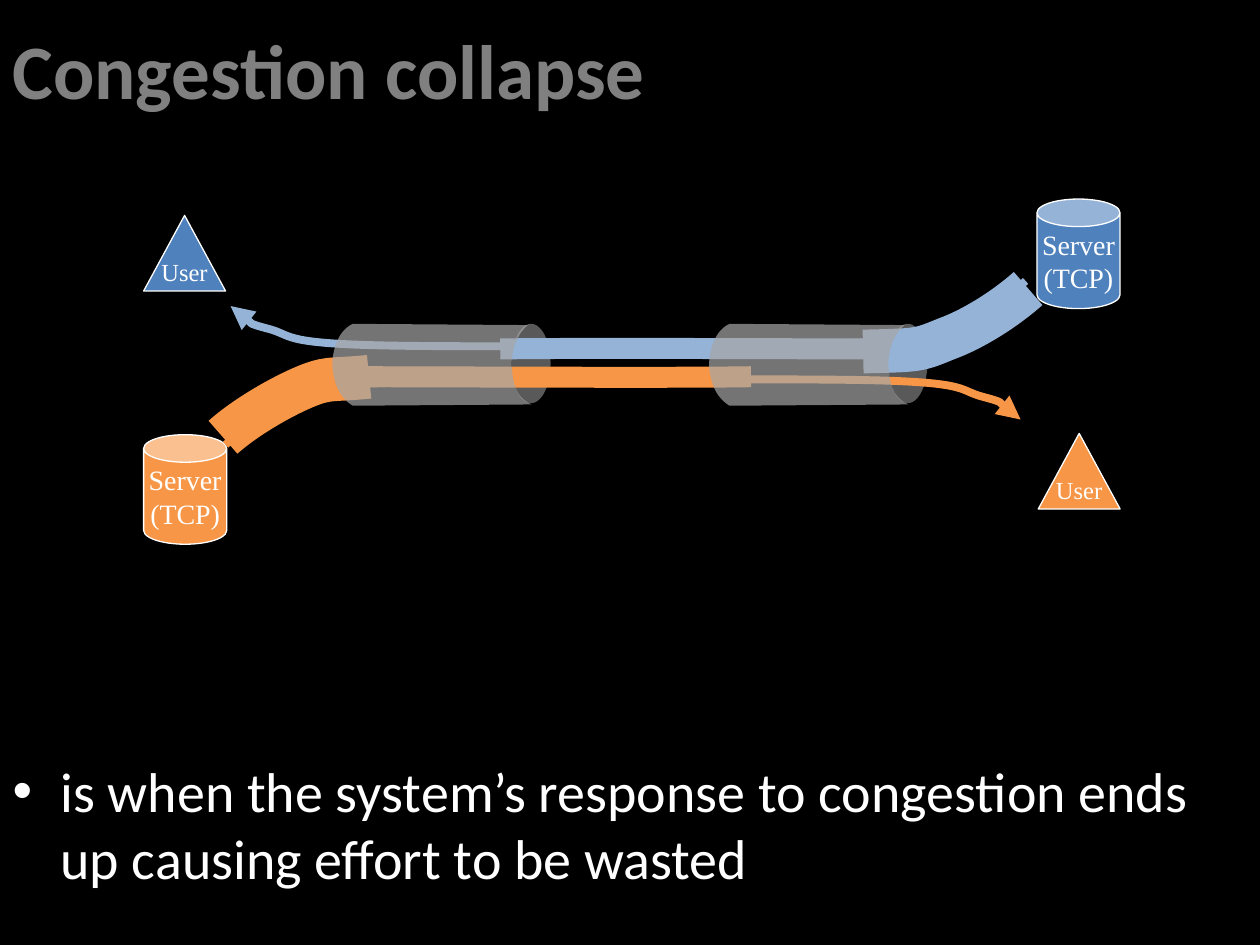
from dataclasses import dataclass

from lxml import etree
from pptx import Presentation
from pptx import util as u
from pptx.dml import color
from pptx.enum import shapes, text
from pptx.oxml import ns

KIND = shapes.MSO_SHAPE


@dataclass
class Theme:
    back: str = "000000"
    head: str = "808080"
    ink: str = "FFFFFF"
    blue: str = "4F81BD"
    sky: str = "95B3D7"
    amber: str = "F79646"
    pipe: str = "A6A6A6"
    mouth: str = "595959"
    sans: str = "Calibri"
    serif: str = "Times New Roman"
    title: int = 44
    body: int = 32
    host: int = 16
    user: int = 14
    thin: float = 4.5
    mid: int = 12
    wide: int = 25


def rgb(code):
    return color.RGBColor.from_string(code)


def turn(parts):
    return [[(9.93 - x, 5.76 - y) for x, y in part] for part in parts]


def shift(parts, gap):
    return [[(x + gap, y) for x, y in part] for part in parts]


class Deck:
    def __init__(self, theme):
        self.theme = theme
        self.file = Presentation()
        self.file.slide_width = u.Inches(10)
        self.file.slide_height = u.Inches(7.5)
        self.slide = self.file.slides.add_slide(self.file.slide_layouts[1])
        fill = self.slide.background.fill
        fill.solid()
        fill.fore_color.rgb = rgb(theme.back)

    def style(self, para, size, face, ink, bold=False):
        font = para.font
        font.size, font.name, font.bold = u.Pt(size), face, bold
        font.color.rgb = rgb(ink)

    def holder(self, index, words, box, size, ink, bold=False):
        shape = self.slide.placeholders[index]
        shape.left, shape.top, shape.width, shape.height = map(u.Inches, box)
        frame = shape.text_frame
        frame.text = words
        frame.auto_size = text.MSO_AUTO_SIZE.NONE
        para = frame.paragraphs[0]
        para.alignment = text.PP_ALIGN.LEFT
        self.style(para, size, self.theme.sans, ink, bold)
        return para

    def title(self, words):
        self.holder(0, words, (0, 0, 10, 1.09), self.theme.title, self.theme.head, True)

    def body(self, words):
        para = self.holder(1, words, (0, 5.95, 10, 1.55), self.theme.body, self.theme.ink)
        props = para._p.get_or_add_pPr()
        props.set("marL", str(u.Inches(0.38)))
        props.set("indent", str(-u.Inches(0.38)))

    def block(self, kind, box, tint):
        shape = self.slide.shapes.add_shape(kind, *map(u.Inches, box))
        shape.shadow.inherit = False
        shape.fill.solid()
        shape.fill.fore_color.rgb = rgb(tint)
        shape.line.fill.background()
        return shape

    def node(self, kind, box, tint, words, size):
        shape = self.block(kind, box, tint)
        shape.line.color.rgb = rgb(self.theme.ink)
        shape.line.width = u.Pt(0.75)
        frame = shape.text_frame
        frame.text = words
        frame.word_wrap = False
        frame.vertical_anchor = text.MSO_ANCHOR.MIDDLE
        for para in frame.paragraphs:
            para.alignment = text.PP_ALIGN.CENTER
            self.style(para, size, self.theme.serif, self.theme.ink)
        return shape

    def server(self, left, top, tint):
        shape = self.node(KIND.CAN, (left, top, 0.66, 0.87), tint, "Server\n(TCP)", self.theme.host)
        shape.adjustments[0] = 0.332

    def user(self, left, top, tint):
        self.node(KIND.ISOSCELES_TRIANGLE, (left, top, 0.65, 0.6), tint, "User", self.theme.user)

    def curve(self, parts, close=False):
        spots = [(u.Inches(x), u.Inches(y)) for part in parts for x, y in part]
        maker = self.slide.shapes.build_freeform(*spots[0], scale=1.0)
        maker.add_line_segments(spots[1:], close=close)
        shape = maker.convert_to_shape()
        shape.shadow.inherit = False
        steps = iter(list(shape.element.iter(ns.qn("a:lnTo"))))
        for part in parts[1:]:
            first = next(steps)
            if len(part) == 3:
                first.tag = ns.qn("a:cubicBezTo")
                for _ in range(2):
                    step = next(steps)
                    first.append(step[0])
                    step.getparent().remove(step)
        return shape

    def flow(self, parts, tint, width, arrow=False):
        shape = self.curve(parts)
        shape.fill.background()
        shape.line.color.rgb = rgb(tint)
        shape.line.width = u.Pt(width)
        if arrow:
            line = shape.element.find(".//" + ns.qn("a:ln"))
            etree.SubElement(line, ns.qn("a:tailEnd"), type="triangle")

    def pipe(self, parts):
        shape = self.curve(parts, close=True)
        shape.line.fill.background()
        shape.fill.solid()
        shape.fill.fore_color.rgb = rgb(self.theme.pipe)
        tone = shape.element.find(".//" + ns.qn("a:srgbClr"))
        etree.SubElement(tone, ns.qn("a:alpha"), val="70000")


THIN = [
    [(8.14, 2.23)],
    [(7.96, 2.39), (7.78, 2.55), (7.49, 2.64)],
    [(7.21, 2.72), (7.2, 2.71), (6.44, 2.73)],
    [(5.68, 2.74), (3.67, 2.76), (2.95, 2.74)],
    [(2.23, 2.72), (2.32, 2.66), (2.13, 2.61)],
    [(1.94, 2.56), (1.83, 2.43), (1.83, 2.43)],
]
MID = [
    [(8.12, 2.31)],
    [(7.94, 2.47), (7.65, 2.64), (7.47, 2.71)],
    [(7.3, 2.79), (7.27, 2.77), (7.09, 2.77)],
    [(6.51, 2.77), (4.54, 2.76), (3.97, 2.77)],
]
WIDE_SKY = [
    [(8.16, 2.29)],
    [(7.98, 2.45), (7.73, 2.61), (7.51, 2.69)],
    [(7.29, 2.78), (7.3, 2.78), (6.85, 2.79)],
]
WIDE_AMBER = [
    [(1.77, 3.47)],
    [(1.95, 3.31), (2.23, 3.15), (2.42, 3.07)],
    [(2.61, 2.99), (2.64, 3.02), (2.93, 2.99)],
]
PIPE = [
    [(2.8, 2.57)],
    [(2.65, 2.64), (2.63, 2.86), (2.64, 2.93)],
    [(2.65, 3), (2.67, 3.14), (2.8, 3.22)],
    [(4.22, 3.21)],
    [(4.08, 3.15), (4.07, 3.01), (4.06, 2.9)],
    [(4.06, 2.8), (4.09, 2.66), (4.19, 2.58)],
]
GAPS = (0, 2.99)


def main():
    look = Theme()
    deck = Deck(look)
    deck.title("Congestion collapse")
    deck.body("is when the system’s response to congestion ends up causing effort to be wasted")
    for gap in GAPS:
        deck.block(KIND.OVAL, (4.06 + gap, 2.57, 0.31, 0.63), look.mouth)
    deck.server(8.23, 1.58, look.blue)
    deck.user(1.14, 1.71, look.blue)
    deck.server(1.14, 3.45, look.amber)
    deck.user(8.24, 3.44, look.amber)
    deck.flow(THIN, look.sky, look.thin, arrow=True)
    deck.flow(WIDE_SKY, look.sky, look.wide)
    deck.flow(turn(THIN), look.amber, look.thin, arrow=True)
    deck.flow(WIDE_AMBER, look.amber, look.wide)
    deck.flow(MID, look.sky, look.mid)
    deck.flow(turn(MID), look.amber, look.mid)
    for gap in GAPS:
        deck.pipe(shift(PIPE, gap))
    deck.file.save("out.pptx")


if __name__ == "__main__":
    main()
